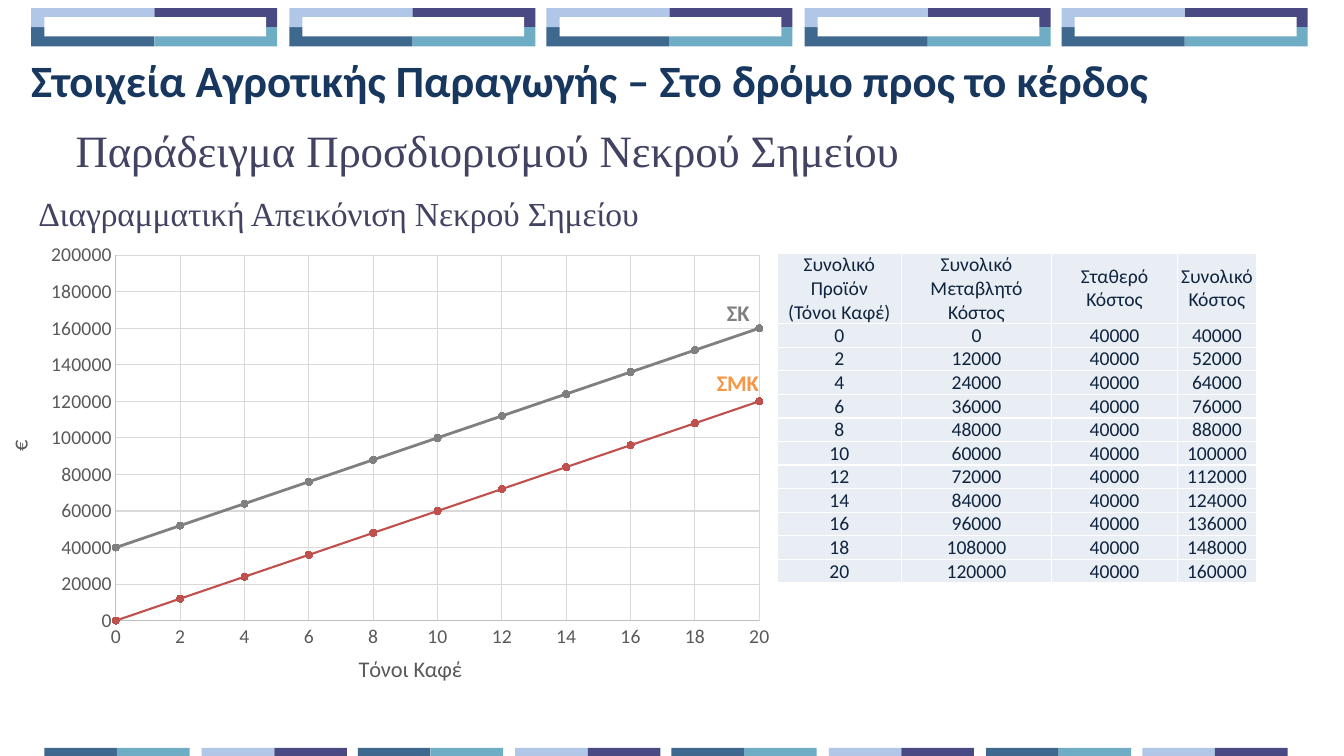
from lxml.etree import SubElement
from pptx import Presentation
from pptx.chart.data import XyChartData
from pptx.dml.color import RGBColor
from pptx.enum.chart import XL_CHART_TYPE, XL_MARKER_STYLE, XL_TICK_MARK
from pptx.enum.shapes import MSO_SHAPE
from pptx.enum.text import MSO_ANCHOR, MSO_AUTO_SIZE, PP_ALIGN
from pptx.oxml import parse_xml
from pptx.oxml.ns import qn
from pptx.util import Pt

WHITE = RGBColor(0xFF, 0xFF, 0xFF)
PALE = RGBColor(0xB1, 0xC7, 0xE7)
VIOLET = RGBColor(0x49, 0x49, 0x83)
STEEL = RGBColor(0x3E, 0x68, 0x8E)
AQUA = RGBColor(0x6E, 0xAD, 0xC4)
NAVY = RGBColor(0x17, 0x37, 0x5E)
SLATE = RGBColor(0x42, 0x42, 0x62)
INK = RGBColor(0x0F, 0x24, 0x3E)
CELL = RGBColor(0xE9, 0xED, 0xF4)
RED = RGBColor(0xC0, 0x50, 0x4D)
GREY = RGBColor(0x80, 0x80, 0x80)
ORANGE = RGBColor(0xF7, 0x96, 0x46)
AXIS_TEXT = RGBColor(0x59, 0x59, 0x59)
AXIS_LINE = RGBColor(0xBF, 0xBF, 0xBF)
GRID = RGBColor(0xD9, 0xD9, 0xD9)

SANS, SERIF = "Calibri", "Times New Roman"

TONS = range(0, 21, 2)
FIXED_COST = 40000
VARIABLE_COST = [6000 * t for t in TONS]
TOTAL_COST = [FIXED_COST + v for v in VARIABLE_COST]
HEADERS = ["Συνολικό\nΠροϊόν\n(Τόνοι Καφέ)", "Συνολικό Μεταβλητό Κόστος",
           "Σταθερό Κόστος", "Συνολικό Κόστος"]


def px(n):
    """Convert px to EMU, at 100 px to the inch."""
    return int(n * 9144)


class SlideBuilder:
    """Draws styled elements on one slide."""

    def __init__(self, prs):
        self.slide = prs.slides.add_slide(prs.slide_layouts[6])
        self.shapes = self.slide.shapes

    def font(self, font, size, color, bold=False, name=SANS):
        font.name, font.size, font.bold = name, Pt(size), bold
        font.color.rgb = color

    def rect(self, x, y, w, h, color):
        sp = self.shapes.add_shape(MSO_SHAPE.RECTANGLE, px(x), px(y), px(w), px(h))
        sp.shadow.inherit = False
        sp.fill.solid()
        sp.fill.fore_color.rgb = color
        sp.line.fill.background()

    def text(self, box, words, size, color, bold=False, name=SANS,
             inset=(10, 5), leading=None, spacing=0):
        """Add a one-run text box; inset is (left, top) in px, spacing in 1/100 pt."""
        tf = self.shapes.add_textbox(*map(px, box)).text_frame
        tf.word_wrap = True
        tf.auto_size = MSO_AUTO_SIZE.SHAPE_TO_FIT_TEXT
        tf.margin_left, tf.margin_top = map(px, inset)
        tf.margin_right, tf.margin_bottom = 0, px(inset[1])
        p = tf.paragraphs[0]
        p.line_spacing = leading
        r = p.add_run()
        r.text = words
        self.font(r.font, size, color, bold, name)
        if spacing:
            r.font._element.set("spc", str(spacing))

    def axis(self, axis, title, top, step):
        axis.minimum_scale, axis.maximum_scale, axis.major_unit = 0, top, step
        axis.major_tick_mark = axis.minor_tick_mark = XL_TICK_MARK.NONE
        axis.has_major_gridlines = True
        for line, color in ((axis.format.line, AXIS_LINE),
                            (axis.major_gridlines.format.line, GRID)):
            line.color.rgb, line.width = color, Pt(0.75)
        self.font(axis.tick_labels.font, 14, AXIS_TEXT)
        axis.tick_labels.number_format = "General"
        axis.tick_labels.number_format_is_linked = False
        r = axis.axis_title.text_frame.paragraphs[0].add_run()
        r.text = title
        self.font(r.font, 16, AXIS_TEXT)

    def scatter(self, box, x_values, series, plot_area):
        """Add a line scatter; series holds (name, values, colour, width)."""
        data = XyChartData()
        for name, values, *_ in series:
            s = data.add_series(name)
            for x, y in zip(x_values, values):
                s.add_data_point(x, y)
        chart = self.shapes.add_chart(
            XL_CHART_TYPE.XY_SCATTER_LINES, *map(px, box), data).chart
        chart.has_title = chart.has_legend = False
        chart.font.name, chart.font.size = SANS, Pt(10)
        plot = chart.plots[0]
        plot.vary_by_categories = False
        for s, (_, _, color, width) in zip(plot.series, series):
            s.smooth = False
            s.format.line.color.rgb, s.format.line.width = color, Pt(width)
            s.marker.style, s.marker.size = XL_MARKER_STYLE.CIRCLE, 5
            s.marker.format.fill.solid()
            s.marker.format.fill.fore_color.rgb = color
            s.marker.format.line.color.rgb = color
        self.fix_plot_area(chart, plot_area)
        return chart

    def fix_plot_area(self, chart, plot_area):
        """Place the inner plot area by fractions of the chart: x, y, w, h."""
        area = chart._chartSpace.chart.plotArea
        for old in area.findall(qn("c:layout")):
            area.remove(old)
        layout = parse_xml('<c:layout xmlns:c="http://schemas.openxmlformats.org/'
                           'drawingml/2006/chart"><c:manualLayout/></c:layout>')
        parts = [("layoutTarget", "inner"), ("xMode", "edge"), ("yMode", "edge")]
        for tag, val in parts + list(zip("xywh", plot_area)):
            SubElement(layout[0], qn("c:" + tag)).set("val", str(val))
        area.insert(0, layout)

    def cell(self, cell, words):
        tc_pr = cell._tc.get_or_add_tcPr()
        for side in "LRTB":
            ln = SubElement(tc_pr, qn("a:ln" + side), w=str(Pt(1)))
            fill = SubElement(ln, qn("a:solidFill"))
            SubElement(fill, qn("a:srgbClr"), val=str(WHITE))
        cell.fill.solid()
        cell.fill.fore_color.rgb = CELL
        cell.margin_left = cell.margin_right = cell.margin_top = cell.margin_bottom = 0
        cell.vertical_anchor = MSO_ANCHOR.MIDDLE
        p = cell.text_frame.paragraphs[0]
        p.alignment = PP_ALIGN.CENTER
        for i, line in enumerate(words.split("\n")):
            if i:
                p.add_line_break()
            r = p.add_run()
            r.text = line
            self.font(r.font, 14, INK)

    def table(self, x, y, widths, heights, rows):
        table = self.shapes.add_table(len(rows), len(widths), px(x), px(y),
                                      px(sum(widths)), px(sum(heights))).table
        table.first_row = table.horz_banding = False
        for col, w in zip(table.columns, widths):
            col.width = px(w)
        for i, row in enumerate(rows):
            table.rows[i].height = px(heights[i])
            for j, value in enumerate(row):
                self.cell(table.cell(i, j), str(value))


def main():
    prs = Presentation()
    prs.slide_width, prs.slide_height = px(1333), px(750)
    s = SlideBuilder(prs)

    for i in range(5):
        x = 31 + round(255.6 * i)
        for dx, y, color in ((122, 8, VIOLET), (122, 27, AQUA),
                             (0, 27, STEEL), (0, 8, PALE)):
            s.rect(x + dx, y, 122, 19, color)
        s.rect(x + 13, 17, 220, 19, WHITE)
    for i in range(8):
        x = 44 + round(155.6 * i)
        left, right = (PALE, VIOLET) if i % 2 else (STEEL, AQUA)
        s.rect(x, 742, 72, 8, left)
        s.rect(x + 72, 742, 72, 8, right)

    s.text((21, 47, 1229, 64), "Στοιχεία Αγροτικής Παραγωγής – Στο δρόμο προς το κέρδος",
           32, NAVY, bold=True)
    for box, words, size in (
            ((74, 95, 1124, 71), "Παράδειγμα Προσδιορισμού Νεκρού Σημείου", 32),
            ((37, 171, 1124, 53), "Διαγραμματική Απεικόνιση Νεκρού Σημείου", 24)):
        s.text(box, words, size, SLATE, name=SERIF, inset=(1, 0),
               leading=1.5, spacing=-10)

    chart = s.scatter((0, 230, 787, 455), TONS,
                      [("Series 1", VARIABLE_COST, RED, 1.5),
                       ("Series 2", TOTAL_COST, GREY, 2)],
                      (0.146, 0.051, 0.811, 0.797))
    s.axis(chart.category_axis, "Τόνοι Καφέ", 20, 2)
    s.axis(chart.value_axis, "€", 200000, 20000)

    rows = [(t, v, FIXED_COST, c) for t, v, c in zip(TONS, VARIABLE_COST, TOTAL_COST)]
    s.table(771, 251, [123, 149, 125, 78], [70] + [23] * len(rows), [HEADERS] + rows)

    for box, words, color in (((692, 361, 77, 37), "ΣΜΚ", ORANGE),
                              ((702, 292, 58, 37), "ΣΚ", GREY)):
        s.text(box, words, 16, color, bold=True, inset=(19, 5), spacing=-10)

    prs.save("out.pptx")


if __name__ == "__main__":
    main()
